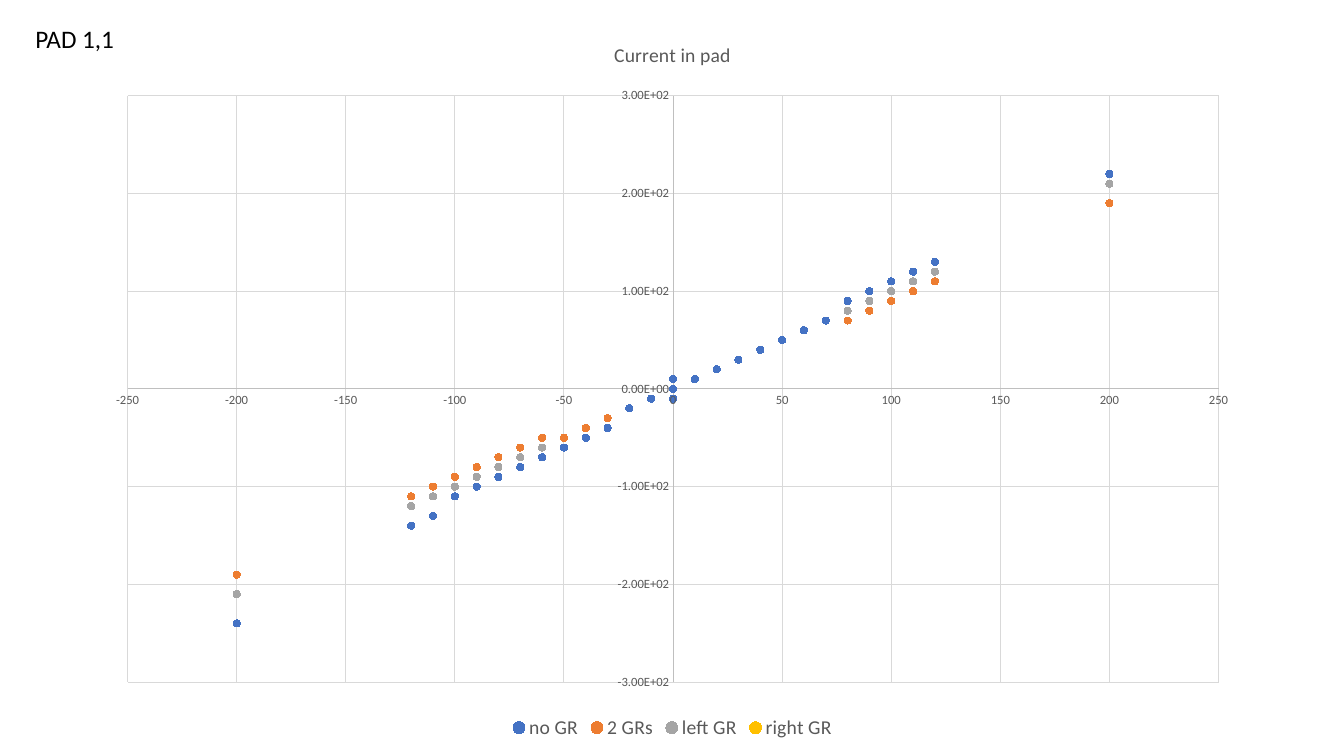
from lxml import etree
from pptx import Presentation
from pptx.chart.data import XyChartData
from pptx.dml.color import RGBColor
from pptx.enum.chart import (XL_CHART_TYPE, XL_LEGEND_POSITION, XL_MARKER_STYLE,
                             XL_TICK_MARK)
from pptx.enum.text import MSO_ANCHOR, MSO_AUTO_SIZE, PP_ALIGN
from pptx.oxml.ns import qn
from pptx.util import Inches, Pt

FONT = "Calibri"
BLACK = RGBColor(0x00, 0x00, 0x00)
GREY = RGBColor(0x59, 0x59, 0x59)
AXIS_GREY = RGBColor(0xBF, 0xBF, 0xBF)
GRID_GREY = RGBColor(0xD9, 0xD9, 0xD9)
BLUE = RGBColor(0x44, 0x72, 0xC4)
ORANGE = RGBColor(0xED, 0x7D, 0x31)
SILVER = RGBColor(0xA5, 0xA5, 0xA5)
YELLOW = RGBColor(0xFF, 0xC0, 0x00)

# Voltages and currents are rounded to tens
VOLTAGES = [-200, *range(-120, -10, 10), *[-10] * 3, *[0] * 5, *[10] * 3,
            *range(20, 121, 10), 200]
CURRENTS = {
    "no GR": (BLUE, [
        -240, -140, -130, -110, -100, -90, -80, -70, -60, -50, -40, -20,
        -10, -10, -10, -10, 0, 0, 0, 10, 10, 10, 10,
        20, 30, 40, 50, 60, 70, 90, 100, 110, 120, 130, 220]),
    "2 GRs": (ORANGE, [
        -190, -110, -100, -90, -80, -70, -60, -50, -50, -40, -30, -20,
        -10, -10, -10, 0, 0, 0, 0, 10, 10, 10, 10,
        20, 30, 40, 50, 60, 70, 70, 80, 90, 100, 110, 190]),
    "left GR": (SILVER, [
        -210, -120, -110, -100, -90, -80, -70, -60, -50, -40, -30, -20,
        -10, -10, -10, -10, 0, 0, 0, 10, 10, 10, 10,
        20, 30, 40, 50, 60, 70, 80, 90, 100, 110, 120, 210]),
    "right GR": (YELLOW, [
        -210, -120, -110, -100, -90, -80, -70, -60, -50, -40, -30, -20,
        -10, -10, -10, 0, 0, 0, 0, 10, 10, 10, 10,
        20, 30, 40, 50, 60, 70, 80, 90, 90, 100, 110, 190]),
}


def set_font(font, size, color):
    font.name = FONT
    font.size = Pt(size)
    font.bold = False
    font.color.rgb = color


def write_text(tf, text, size=18, color=BLACK, align=PP_ALIGN.LEFT):
    p = tf.paragraphs[0]
    p.alignment = align
    r = p.add_run()
    r.text = text
    set_font(r.font, size, color)


def set_line(line, color):
    line.color.rgb = color
    line.width = Pt(0.75)


def format_axis(axis, low, high, step, number_format):
    axis.minimum_scale, axis.maximum_scale, axis.major_unit = low, high, step
    axis.major_tick_mark = axis.minor_tick_mark = XL_TICK_MARK.NONE
    axis.has_major_gridlines = True
    set_line(axis.major_gridlines.format.line, GRID_GREY)
    set_line(axis.format.line, AXIS_GREY)
    set_font(axis.tick_labels.font, 9, GREY)
    axis.tick_labels.number_format = number_format
    axis.tick_labels.number_format_is_linked = False


def place_plot_area(chart, **fractions):
    """Fix the inner plot area as fractions (x, y, w, h) of the chart."""
    plot_area = chart.plots[0]._element.getparent()
    for old in plot_area.findall(qn("c:layout")):
        plot_area.remove(old)
    layout = etree.Element(qn("c:layout"))
    plot_area.insert(0, layout)
    manual = etree.SubElement(layout, qn("c:manualLayout"))
    settings = {"layoutTarget": "inner", "xMode": "edge", "yMode": "edge", **fractions}
    for name, value in settings.items():
        etree.SubElement(manual, qn("c:" + name)).set("val", str(value))


def add_title(s, text):
    title = s.shapes.title
    title.left, title.top = Inches(0.25), Inches(0.18)
    title.width, title.height = Inches(0.99), Inches(0.4)
    tf = title.text_frame
    tf.word_wrap = False
    tf.auto_size = MSO_AUTO_SIZE.NONE
    tf.vertical_anchor = MSO_ANCHOR.TOP
    write_text(tf, text)
    tf.paragraphs[0].line_spacing = 1.0


def add_current_chart(s):
    data = XyChartData()
    for name, (_, currents) in CURRENTS.items():
        series = data.add_series(name)
        for voltage, current in zip(VOLTAGES, currents):
            series.add_data_point(voltage, current)
    chart = s.shapes.add_chart(XL_CHART_TYPE.XY_SCATTER, Inches(0.92), Inches(0.18),
                               Inches(11.5), Inches(7.2), data).chart
    set_font(chart.font, 10, BLACK)
    chart.has_title = True
    write_text(chart.chart_title.text_frame, "Current in pad", size=14, color=GREY,
               align=PP_ALIGN.CENTER)
    chart.has_legend = True
    chart.legend.position = XL_LEGEND_POSITION.BOTTOM
    chart.legend.include_in_layout = False
    set_font(chart.legend.font, 14, GREY)
    format_axis(chart.category_axis, -250, 250, 50, "General")
    format_axis(chart.value_axis, -300, 300, 100, "0.00E+00")
    place_plot_area(chart, x=0.03, y=0.107, w=0.941, h=0.808)

    plot = chart.plots[0]
    plot.vary_by_categories = False
    for series, (color, _) in zip(plot.series, CURRENTS.values()):
        series.smooth = False
        series.format.line.fill.background()
        series.marker.style = XL_MARKER_STYLE.CIRCLE
        series.marker.size = 5
        series.marker.format.fill.solid()
        series.marker.format.fill.fore_color.rgb = color
        set_line(series.marker.format.line, color)


def main():
    prs = Presentation()
    prs.slide_width, prs.slide_height = Inches(13.33), Inches(7.5)
    s = prs.slides.add_slide(prs.slide_layouts[5])
    add_current_chart(s)
    add_title(s, "PAD 1,1")
    prs.save("out.pptx")


if __name__ == "__main__":
    main()
